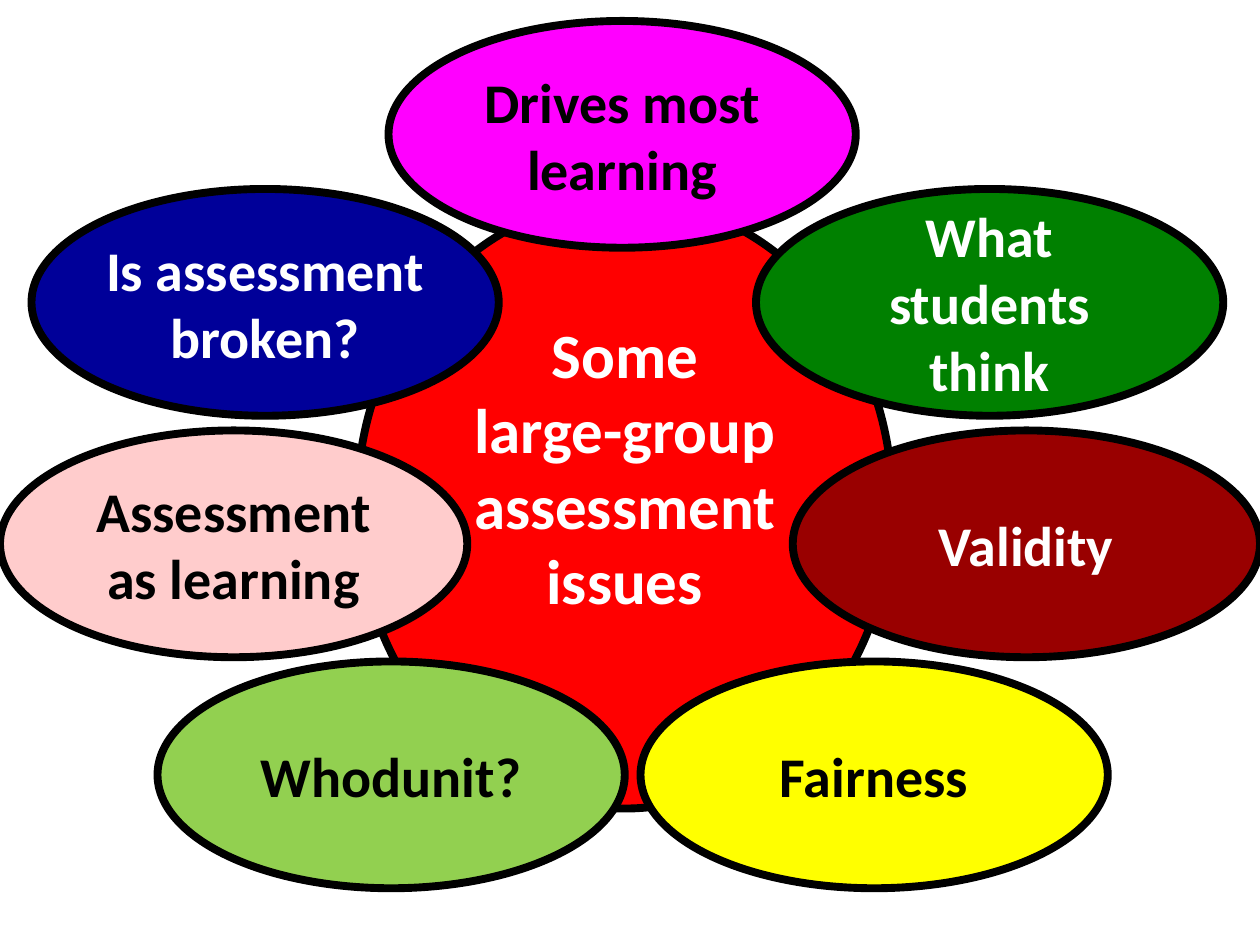
from pptx import Presentation
from pptx import util as u
from pptx.dml.color import RGBColor
from pptx.enum import shapes, text

COLORS = {
    "black": "000000", "white": "FFFFFF", "red": "FF0000", "maroon": "990000",
    "navy": "000099", "green": "008000", "pink": "FFCCCC",
    "magenta": "FF00FF", "lime": "92D050", "yellow": "FFFF00",
}
COLS, ROWS = 120, 90  # grid cells across and down the slide

prs = Presentation()
prs.slide_width, prs.slide_height = u.Inches(10), u.Inches(7.5)
cell_w, cell_h = prs.slide_width / COLS, prs.slide_height / ROWS
s = prs.slides.add_slide(prs.slide_layouts[6])


def rgb(name):
    return RGBColor.from_string(COLORS[name])


def add_oval(lines, col, row, cols=44.5, rows=21.6, fill="red", color="white",
             size=32, inset=0, bottom=0):
    """Draw an outlined ellipse at a grid position, one paragraph per line."""
    sp = s.shapes.add_shape(shapes.MSO_SHAPE.OVAL, int(col * cell_w), int(row * cell_h),
                            int(cols * cell_w), int(rows * cell_h))
    sp.shadow.inherit = False
    sp.fill.solid()
    sp.fill.fore_color.rgb = rgb(fill)
    sp.line.color.rgb = rgb("black")
    sp.line.width = u.Pt(4.5)
    tf = sp.text_frame
    tf.word_wrap = True
    tf.vertical_anchor = text.MSO_ANCHOR.MIDDLE
    tf.margin_left = tf.margin_right = u.Inches(inset)
    tf.margin_top, tf.margin_bottom = 0, u.Inches(bottom)
    tf.text = lines
    for p in tf.paragraphs:
        p.alignment = text.PP_ALIGN.CENTER
        for r in p.runs:
            r.font.name, r.font.size, r.font.bold = "Calibri", u.Pt(size), True
            r.font.color.rgb = rgb(color)


add_oval("Some\nlarge-group\nassessment\nissues", 34, 19, cols=51, rows=58,
         size=36, inset=0.1, bottom=0.6)

issues = [
    ("Validity", 75.5, 41, "maroon", "white"),
    ("Is assessment broken?", 3, 18, "navy", "white"),
    ("What students think", 72, 18, "green", "white"),
    ("Assessment as learning", 0, 41, "pink", "black"),
    ("Drives most learning", 37, 2, "magenta", "black"),
    ("Whodunit?", 15, 63, "lime", "black"),
    ("Fairness", 61, 63, "yellow", "black"),
]
for issue, col, row, fill, color in issues:
    add_oval(issue, col, row, fill=fill, color=color)

prs.save("out.pptx")
